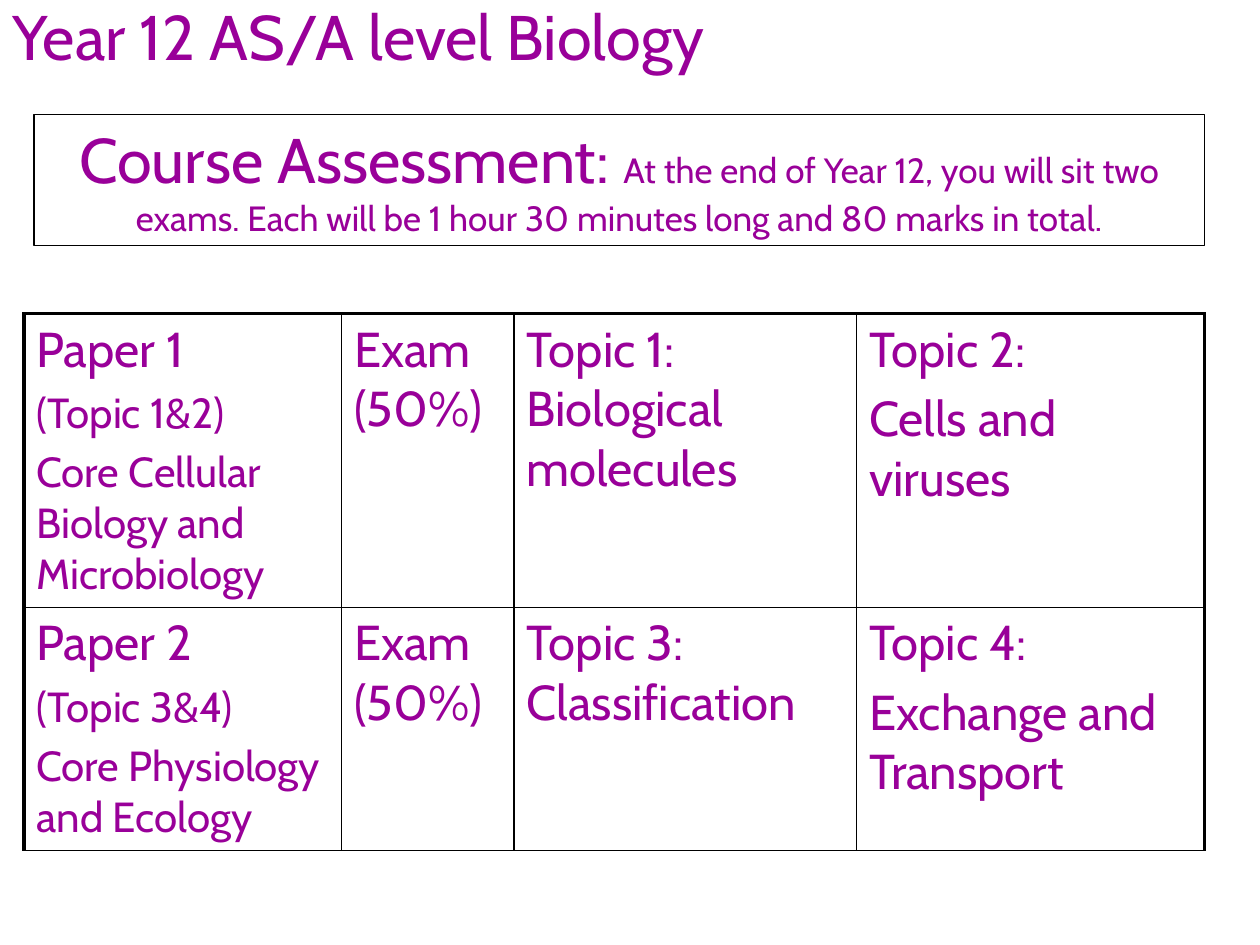
from lxml.etree import SubElement
from pptx import Presentation
from pptx.dml.color import RGBColor
from pptx.enum.shapes import MSO_SHAPE
from pptx.enum.text import MSO_ANCHOR, MSO_AUTO_SIZE, PP_ALIGN
from pptx.oxml.ns import qn
from pptx.util import Inches, Pt

FONT = "Cabin"
COLORS = {"text": "990099", "line": "000000", "background": "FFFFFF"}
THIN, THICK = 1, 2.25
COLUMN_WIDTHS = [2.52, 1.37, 2.72, 2.76]
ROW_HEIGHTS = [2.33, 1.93]
# Each cell is a list of paragraphs: (text, size in points)
PAPERS = [
    [
        [("Paper 1", 28), ("(Topic 1&2)", 24),
         ("Core Cellular Biology and Microbiology", 24)],
        [("Exam (50%)", 28)],
        [("Topic 1: Biological molecules", 28)],
        [("Topic 2:", 28), ("Cells and viruses", 28)],
    ],
    [
        [("Paper 2", 28), ("(Topic 3&4)", 24),
         ("Core Physiology and Ecology", 24)],
        [("Exam (50%)", 28)],
        [("Topic 3: Classification", 28)],
        [("Topic 4:", 28), ("Exchange and Transport", 28)],
    ],
]


def color(name):
    return RGBColor.from_string(COLORS[name])


def fill_solid(target):
    target.fill.solid()
    target.fill.fore_color.rgb = color("background")


def add_run(paragraph, text, size):
    run = paragraph.add_run()
    run.text = text
    run.font.name = FONT
    run.font.size = Pt(size)
    run.font.color.rgb = color("text")


def set_borders(cell, widths):
    """Draw the left, right, top and bottom borders, widths in points."""
    properties = cell._tc.get_or_add_tcPr()
    for index, (side, width) in enumerate(zip("LRTB", widths)):
        line = SubElement(properties, qn(f"a:ln{side}"), w=str(Pt(width)))
        fill = SubElement(line, qn("a:solidFill"))
        SubElement(fill, qn("a:srgbClr"), val=COLORS["line"])
        properties.insert(index, line)


def add_title(slide, text):
    title = slide.shapes.title
    title.left, title.top = 0, 0
    title.width, title.height = Inches(10), Inches(0.6)
    fill_solid(title)
    frame = title.text_frame
    frame.auto_size = MSO_AUTO_SIZE.NONE
    frame.vertical_anchor = MSO_ANCHOR.TOP
    paragraph = frame.paragraphs[0]
    paragraph.alignment = PP_ALIGN.LEFT
    paragraph.line_spacing = 0.9
    add_run(paragraph, text, 36)


def add_assessment_box(slide, runs):
    box = slide.shapes.add_shape(
        MSO_SHAPE.RECTANGLE,
        Inches(0.27), Inches(0.91), Inches(9.29), Inches(1.04))
    box.shadow.inherit = False
    fill_solid(box)
    box.line.color.rgb = color("line")
    box.line.width = Pt(0.75)
    frame = box.text_frame
    frame.word_wrap = True
    frame.auto_size = MSO_AUTO_SIZE.SHAPE_TO_FIT_TEXT
    frame.vertical_anchor = MSO_ANCHOR.TOP
    paragraph = frame.paragraphs[0]
    paragraph.alignment = PP_ALIGN.CENTER
    for text, size in runs:
        add_run(paragraph, text, size)


def fill_cell(cell, paragraphs):
    fill_solid(cell)
    frame = cell.text_frame
    for index, (text, size) in enumerate(paragraphs):
        paragraph = frame.add_paragraph() if index else frame.paragraphs[0]
        if index:
            paragraph.space_before = Pt(round(size * 0.2, 1))
        add_run(paragraph, text, size)


def add_papers_table(slide):
    table = slide.shapes.add_table(
        len(ROW_HEIGHTS), len(COLUMN_WIDTHS), Inches(0.19), Inches(2.49),
        Inches(sum(COLUMN_WIDTHS)), Inches(sum(ROW_HEIGHTS))).table
    table.first_row = table.horz_banding = False
    for column, width in zip(table.columns, COLUMN_WIDTHS):
        column.width = Inches(width)
    for row, height in zip(table.rows, ROW_HEIGHTS):
        row.height = Inches(height)
    last_column = len(COLUMN_WIDTHS) - 1
    for row_index, paper in enumerate(PAPERS):
        for column_index, paragraphs in enumerate(paper):
            cell = table.cell(row_index, column_index)
            fill_cell(cell, paragraphs)
            set_borders(cell, [
                THICK if column_index == 0 else THIN,
                THICK if column_index == last_column else THIN,
                THICK if row_index == 0 else THIN,
                THIN,
            ])


def main():
    presentation = Presentation()
    presentation.slide_width = Inches(10)
    presentation.slide_height = Inches(7.5)
    slide = presentation.slides.add_slide(presentation.slide_layouts[5])
    add_title(slide, "Year 12 AS/A level Biology")
    add_papers_table(slide)
    add_assessment_box(slide, [
        ("Course Assessment: ", 36),
        ("At the end of Year 12, you will sit two exams. Each will be "
         "1 hour 30 minutes long and 80 marks in total.", 20),
    ])
    presentation.save("out.pptx")


if __name__ == "__main__":
    main()
